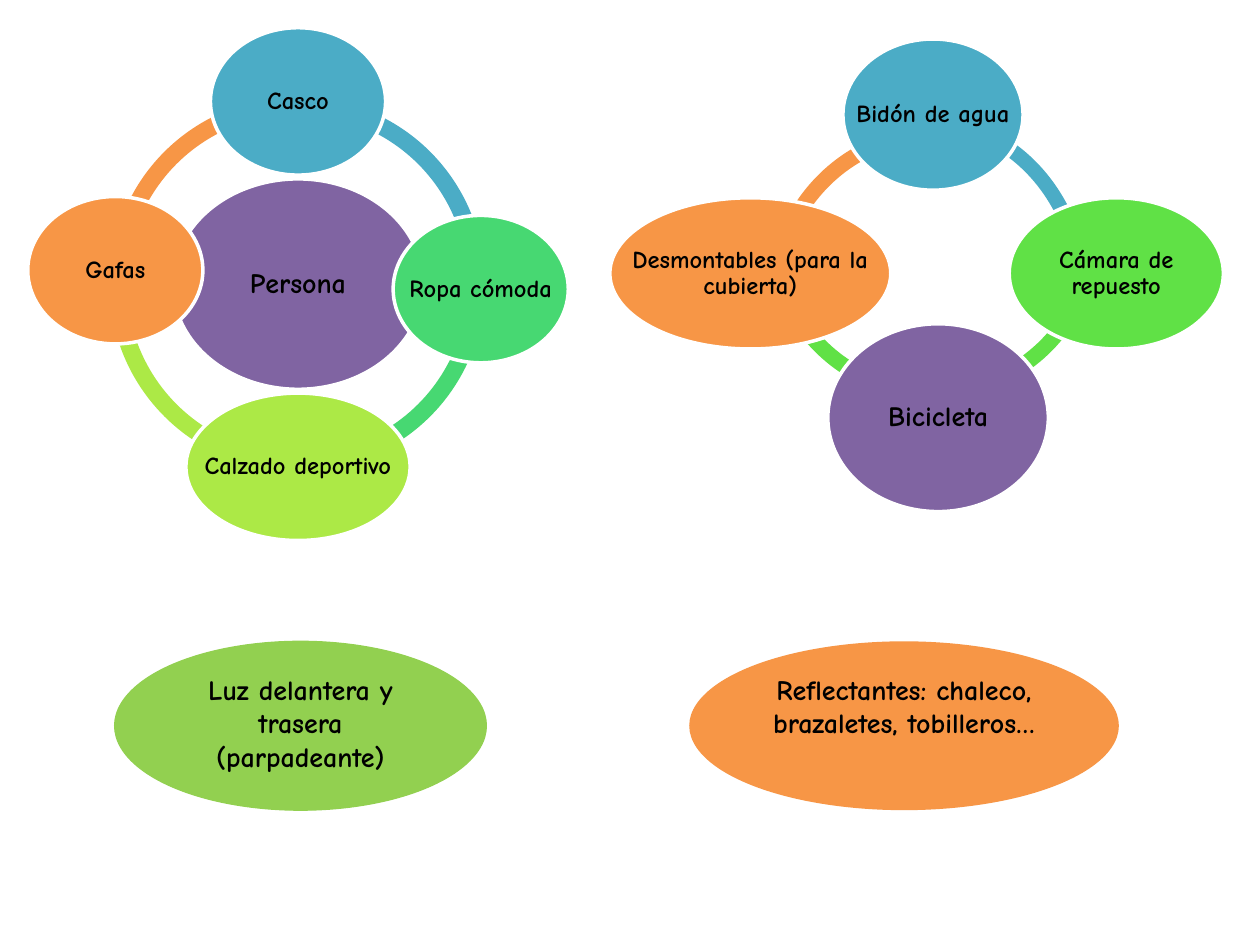
import pptx
import pptx.util
import pptx.dml.color
import pptx.enum.shapes
import pptx.enum.text

RGB = pptx.dml.color.RGBColor
KIND = pptx.enum.shapes.MSO_SHAPE
ANCHOR = pptx.enum.text.MSO_ANCHOR
BLACK = RGB(0x00, 0x00, 0x00)
WHITE = RGB(0xFF, 0xFF, 0xFF)
ORANGE = RGB(0xF7, 0x96, 0x46)
LIME = RGB(0xAC, 0xE9, 0x46)
MINT = RGB(0x47, 0xD8, 0x72)
BLUE = RGB(0x4B, 0xAC, 0xC6)
PURPLE = RGB(0x80, 0x64, 0xA2)
GREEN = RGB(0x60, 0xE1, 0x46)
LEAF = RGB(0x92, 0xD0, 0x50)

COLS, ROWS = 100, 75
BAND = 0.046
INSET = pptx.util.Inches(0.02)
SIDES = ("margin_left", "margin_top", "margin_right", "margin_bottom")
LABEL = {"word_wrap": True, "vertical_anchor": ANCHOR.MIDDLE, **dict.fromkeys(SIDES, INSET)}
NOTE = {"word_wrap": True, "vertical_anchor": ANCHOR.TOP}
TIGHT = {"line_spacing": 0.9}
LOOSE = {"space_after": pptx.util.Pt(10)}

RING_ARCS = [
    (8.7, 7.7, 29.7, 29.7, 110.51, 162.09, ORANGE),
    (8.7, 7.7, 29.7, 29.7, 53.91, 110.51, LIME),
    (8.8, 7.7, 29.7, 29.7, 1, 54.02, MINT),
    (8.8, 7.7, 29.7, 29.7, 161.99, 1, BLUE),
    (60.8, 10, 26.9, 28, 113.38, 161.52, ORANGE),
    (60.7, 4.8, 26.7, 27, 7.88, 100.12, GREEN),
    (61.1, 9.2, 25.5, 29.6, 162.48, 210.62, BLUE),
]
NODES = [
    ("Persona", 23.65, 22.55, 19.9, 16.7, PURPLE, 16),
    ("Casco", 23.65, 8.05, 13.9, 11.7, BLUE, 14),
    ("Ropa cómoda", 38.15, 22.95, 13.9, 11.7, MINT, 14),
    ("Calzado deportivo", 23.65, 37.05, 17.8, 11.7, LIME, 14),
    ("Gafas", 9.15, 21.45, 13.9, 11.7, ORANGE, 14),
    ("Bicicleta", 74.45, 33.15, 17.5, 14.9, PURPLE, 16),
    ("Bidón de agua", 74.05, 9.1, 14.3, 12, BLUE, 14),
    ("Cámara de repuesto", 88.6, 21.7, 17, 12, GREEN, 14),
    ("Desmontables (para la cubierta)", 59.55, 21.7, 22.3, 12, ORANGE, 14),
]
NOTES = [
    ("Luz delantera y trasera (parpadeante)", 9.1, 50.9, 29.5, 13.4, LEAF),
    ("Reflectantes: chaleco, brazaletes, tobilleros…", 54.7, 50.9, 34.1, 13.4, ORANGE),
]


class Board:
    """Hold the style and current slide, placed on a grid of columns and rows."""

    def __init__(self, deck):
        self.font = {"name": "Comic Neue", "bold": True}
        self.cell = (deck.slide_width / COLS, deck.slide_height / ROWS)
        self.slide = deck.slides.add_slide(deck.slide_layouts[6])

    def place(self, *box):
        """Turn grid cells into slide lengths."""
        return [round(part * self.cell[i % 2]) for i, part in enumerate(box)]

    def form(self, kind, box, fill, edge=None):
        """Draw a filled preset shape with an optional (colour, width) edge."""
        shape = self.slide.shapes.add_shape(kind, *self.place(*box))
        shape.shadow.inherit = False
        shape.fill.solid()
        shape.fill.fore_color.rgb = fill
        if edge:
            shape.line.color.rgb, shape.line.width = edge
        else:
            shape.line.fill.background()
        return shape

    def letter(self, shape, text, size, frame, para):
        """Put centred, styled text in a shape."""
        body = shape.text_frame
        body.text = text
        line = body.paragraphs[0]
        line.alignment = pptx.enum.text.PP_ALIGN.CENTER
        font = line.runs[0].font
        font.color.rgb = BLACK
        look = {**self.font, "size": pptx.util.Pt(size)}
        for part, style in ((body, frame), (line, para), (font, look)):
            for name, value in style.items():
                setattr(part, name, value)

    def arc(self, left, top, wide, high, start, end, fill):
        """Draw one band of a ring."""
        shape = self.form(KIND.BLOCK_ARC, (left, top, wide, high), fill)
        for i, value in enumerate((start, end, BAND)):
            shape.adjustments[i] = value

    def node(self, text, mid_x, mid_y, wide, high, fill, size):
        """Draw a white-edged oval about its centre, with a label as wide as it."""
        box = (mid_x - wide / 2, mid_y - high / 2, wide, high)
        self.form(KIND.OVAL, box, fill, (WHITE, pptx.util.Pt(2)))
        label = self.slide.shapes.add_textbox(*self.place(*box))
        self.letter(label, text, size, LABEL, TIGHT)

    def note(self, text, left, top, wide, high, fill):
        """Draw a free oval holding its own text."""
        edge = (LEAF, pptx.util.Pt(0.75)) if fill == LEAF else None
        shape = self.form(KIND.OVAL, (left, top, wide, high), fill, edge)
        self.letter(shape, text, 16, NOTE, LOOSE)


def main():
    """Build the slide and save it."""
    deck = pptx.Presentation()
    deck.slide_width = pptx.util.Inches(10)
    deck.slide_height = pptx.util.Inches(7.5)
    board = Board(deck)
    for draw, rows in ((board.arc, RING_ARCS), (board.node, NODES), (board.note, NOTES)):
        for row in rows:
            draw(*row)
    deck.save("out.pptx")


if __name__ == "__main__":
    main()
